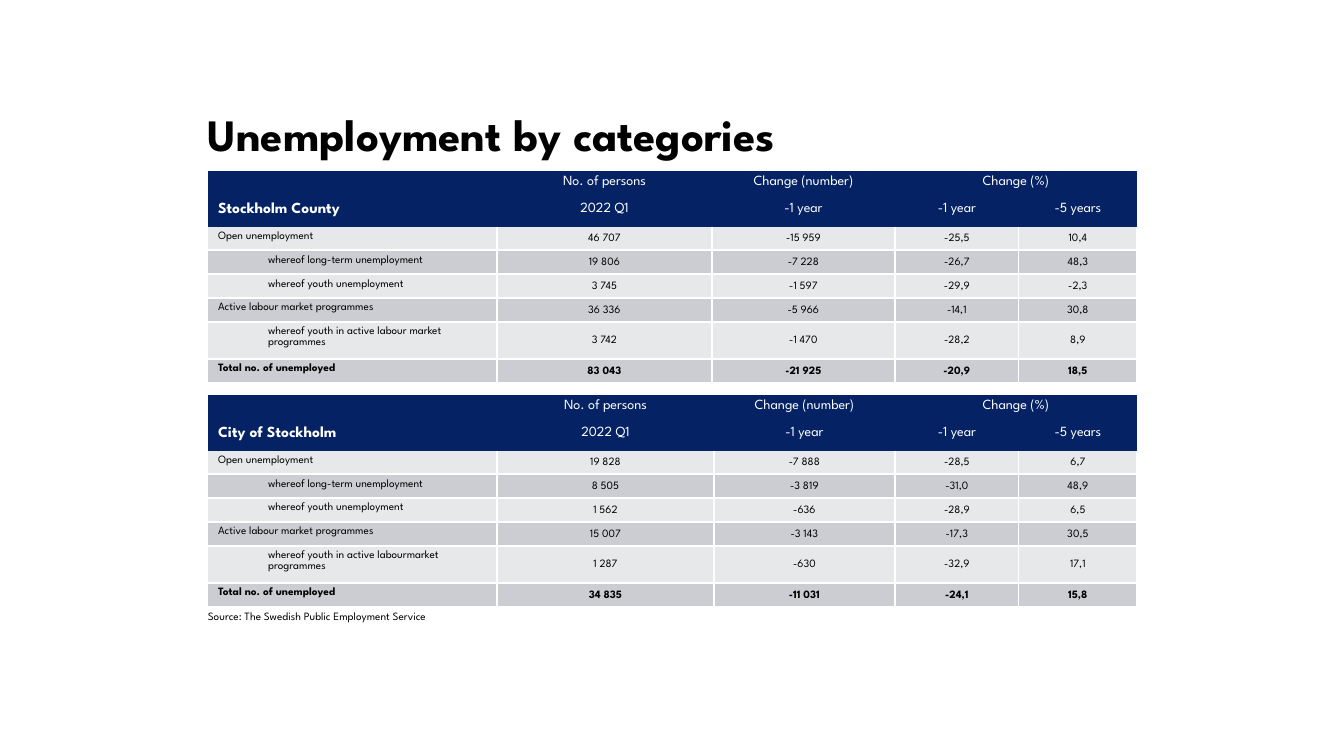
from dataclasses import dataclass

from lxml import etree
from pptx import Presentation
from pptx import util as u
from pptx.dml.color import RGBColor
from pptx.enum import text
from pptx.oxml import ns

EMU_PER_PX = 914400 / 100.8


@dataclass(frozen=True)
class Theme:
    font: str = "League Spartan"
    navy: str = "052364"
    light: str = "E7E8EA"
    dark: str = "CCCDD3"
    white: str = "FFFFFF"
    black: str = "000000"
    title: int = 32
    region: int = 11
    header: int = 10
    body: int = 8
    border: int = 1


@dataclass(frozen=True)
class Row:
    label: str
    values: tuple[str, ...]
    indented: bool = False
    bold: bool = False


@dataclass(frozen=True)
class Region:
    name: str
    top: int
    columns: tuple[int, ...]
    rows: tuple[Row, ...]


THEME = Theme()
LEFT, WIDTH = 208, 929
INDENT = 50
ROW_HEIGHTS = (23, 24, 20, 24, 24, 24, 31, 24)
HEADERS = (
    ("", "No. of persons", "Change (number)", "Change (%)", ""),
    ("", "2022 Q1", "-1 year", "-1 year", "-5 years"),
)

REGIONS = (
    Region("Stockholm County", 171, (289, 215, 183, 124, 118), (
        Row("Open unemployment", ("46 707", "-15 959", "-25,5", "10,4")),
        Row("whereof long-term unemployment", ("19 806", "-7 228", "-26,7", "48,3"), indented=True),
        Row("whereof youth unemployment", ("3 745", "-1 597", "-29,9", "-2,3"), indented=True),
        Row("Active labour market programmes", ("36 336", "-5 966", "-14,1", "30,8")),
        Row("whereof youth in active labour market programmes",
            ("3 742", "-1 470", "-28,2", "8,9"), indented=True),
        Row("Total no. of unemployed", ("83 043", "-21 925", "-20,9", "18,5"), bold=True),
    )),
    Region("City of Stockholm", 395, (289, 217, 181, 124, 118), (
        Row("Open unemployment", ("19 828", "-7 888", "-28,5", "6,7")),
        Row("whereof long-term unemployment", ("8 505", "-3 819", "-31,0", "48,9"), indented=True),
        Row("whereof youth unemployment", ("1 562", "-636", "-28,9", "6,5"), indented=True),
        Row("Active labour market programmes", ("15 007", "-3 143", "-17,3", "30,5")),
        Row("whereof youth in active labourmarket programmes",
            ("1 287", "-630", "-32,9", "17,1"), indented=True),
        Row("Total no. of unemployed", ("34 835", "-11 031", "-24,1", "15,8"), bold=True),
    )),
)


def px(n: int) -> int:
    return round(n * EMU_PER_PX)


def write(p, words: str, size: int, color: str, bold: bool = False) -> None:
    if not words:
        # An empty cell keeps its row low only if its end mark is small.
        end = etree.SubElement(p._p, ns.qn("a:endParaRPr"))
        end.set("sz", str(size * 100))
        return
    r = p.add_run()
    r.text = words
    for name, value in {"name": THEME.font, "size": u.Pt(size), "bold": bold}.items():
        setattr(r.font, name, value)
    r.font.color.rgb = RGBColor.from_string(color)


def add_text(s, box: tuple[int, int, int, int], words: str, size: int,
             bold: bool = False, **frame) -> None:
    tf = s.shapes.add_textbox(*map(px, box)).text_frame
    for name, value in frame.items():
        setattr(tf, name, value)
    write(tf.paragraphs[0], words, size, THEME.black, bold)


def paint(cell, fill: str, bordered: str = "") -> None:
    """Fill a cell and draw white borders on the sides named among L, R, T and B."""
    tc_pr = cell._tc.get_or_add_tcPr()
    for side in "LRTB":
        ln = etree.SubElement(tc_pr, ns.qn(f"a:ln{side}"))
        if side in bordered:
            ln.set("w", str(u.Pt(THEME.border)))
            solid = etree.SubElement(ln, ns.qn("a:solidFill"))
            etree.SubElement(solid, ns.qn("a:srgbClr")).set("val", THEME.white)
        else:
            etree.SubElement(ln, ns.qn("a:noFill"))
    cell.fill.solid()
    cell.fill.fore_color.rgb = RGBColor.from_string(fill)


def add_header(table, region: Region) -> None:
    for i, labels in enumerate(HEADERS):
        for j, label in enumerate(labels):
            cell = table.cell(i, j)
            paint(cell, THEME.navy)
            p = cell.text_frame.paragraphs[0]
            if (i, j) == (1, 0):
                write(p, region.name, THEME.region, THEME.white, bold=True)
            else:
                p.alignment = text.PP_ALIGN.CENTER
                write(p, label, THEME.header, THEME.white)
    table.cell(0, 3).merge(table.cell(0, 4))


def add_row(table, index: int, row: Row) -> None:
    first = len(HEADERS)
    fill = THEME.dark if (index - first) % 2 else THEME.light
    sides = "LRB" if index == first else "LRTB"
    for j, words in enumerate((row.label, *row.values)):
        cell = table.cell(index, j)
        paint(cell, fill, sides if j else sides.replace("L", ""))
        p = cell.text_frame.paragraphs[0]
        if j:
            p.alignment = text.PP_ALIGN.CENTER
            layout = {"vertical_anchor": text.MSO_ANCHOR.MIDDLE, "margin_left": px(1),
                      "margin_right": px(1), "margin_top": px(1), "margin_bottom": 0}
            for name, value in layout.items():
                setattr(cell, name, value)
        elif row.indented:
            p.level = 1
            p_pr = p._p.get_or_add_pPr()
            p_pr.set("marL", str(px(INDENT)))
            p_pr.set("indent", "0")
        write(p, words, THEME.body, THEME.black, row.bold)


def add_region(s, region: Region) -> None:
    table = s.shapes.add_table(len(ROW_HEIGHTS), len(region.columns), px(LEFT), px(region.top),
                               px(WIDTH), px(sum(ROW_HEIGHTS))).table
    table.first_row = table.horz_banding = False
    for column, width in zip(table.columns, region.columns):
        column.width = px(width)
    for table_row, height in zip(table.rows, ROW_HEIGHTS):
        table_row.height = px(height)
    add_header(table, region)
    for index, row in enumerate(region.rows, start=len(HEADERS)):
        add_row(table, index, row)


def main() -> None:
    prs = Presentation()
    prs.slide_width, prs.slide_height = px(1344), px(756)
    s = prs.slides.add_slide(prs.slide_layouts[6])
    add_text(s, (LEFT, 37, WIDTH, 123), "Unemployment by categories", THEME.title, bold=True,
             word_wrap=True, vertical_anchor=text.MSO_ANCHOR.BOTTOM,
             margin_left=0, margin_right=0, margin_top=0, margin_bottom=0)
    for region in REGIONS:
        add_region(s, region)
    add_text(s, (198, 604, 282, 24), "Source: The Swedish Public Employment Service", THEME.body,
             word_wrap=False, auto_size=text.MSO_AUTO_SIZE.SHAPE_TO_FIT_TEXT)
    prs.save("out.pptx")


if __name__ == "__main__":
    main()
